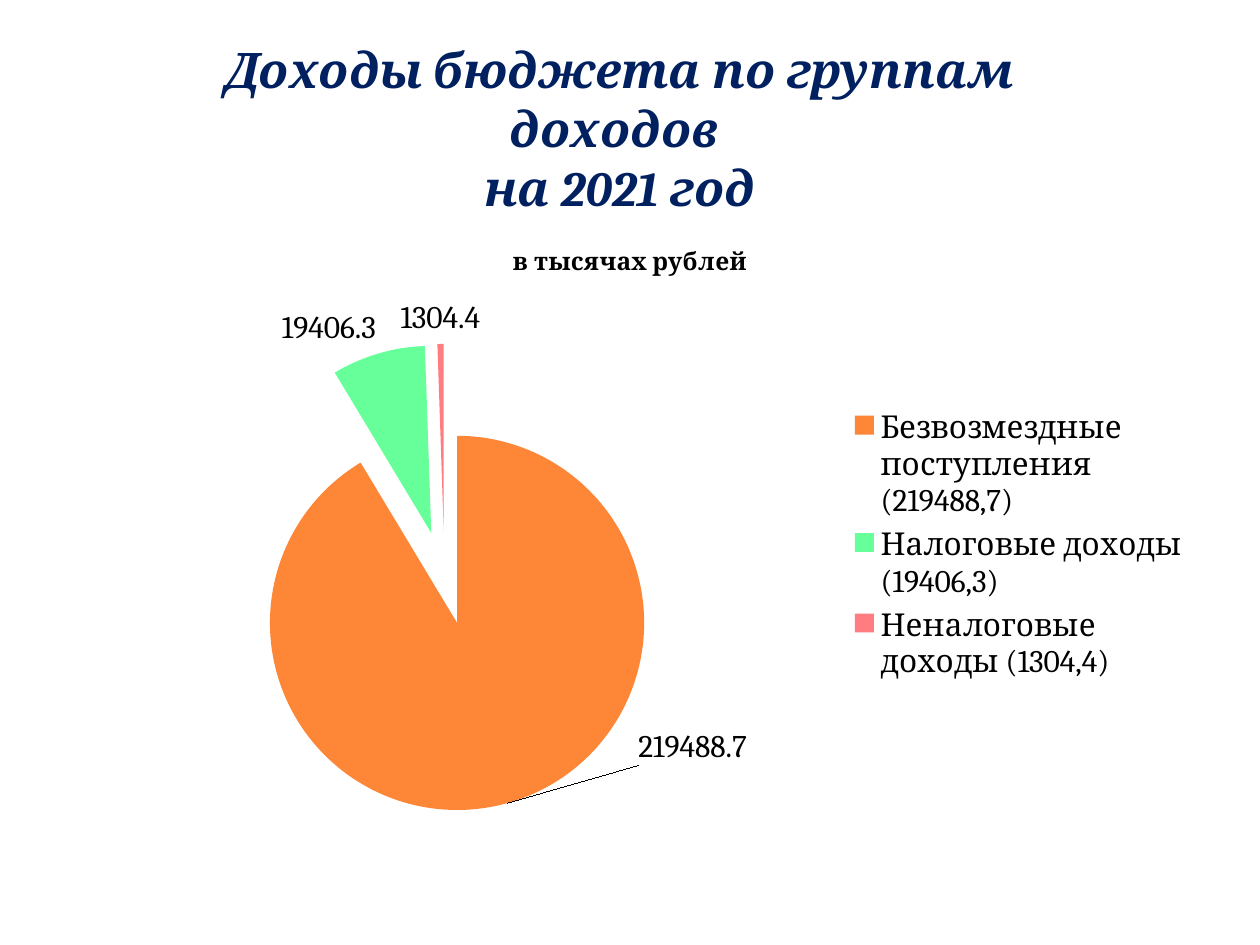
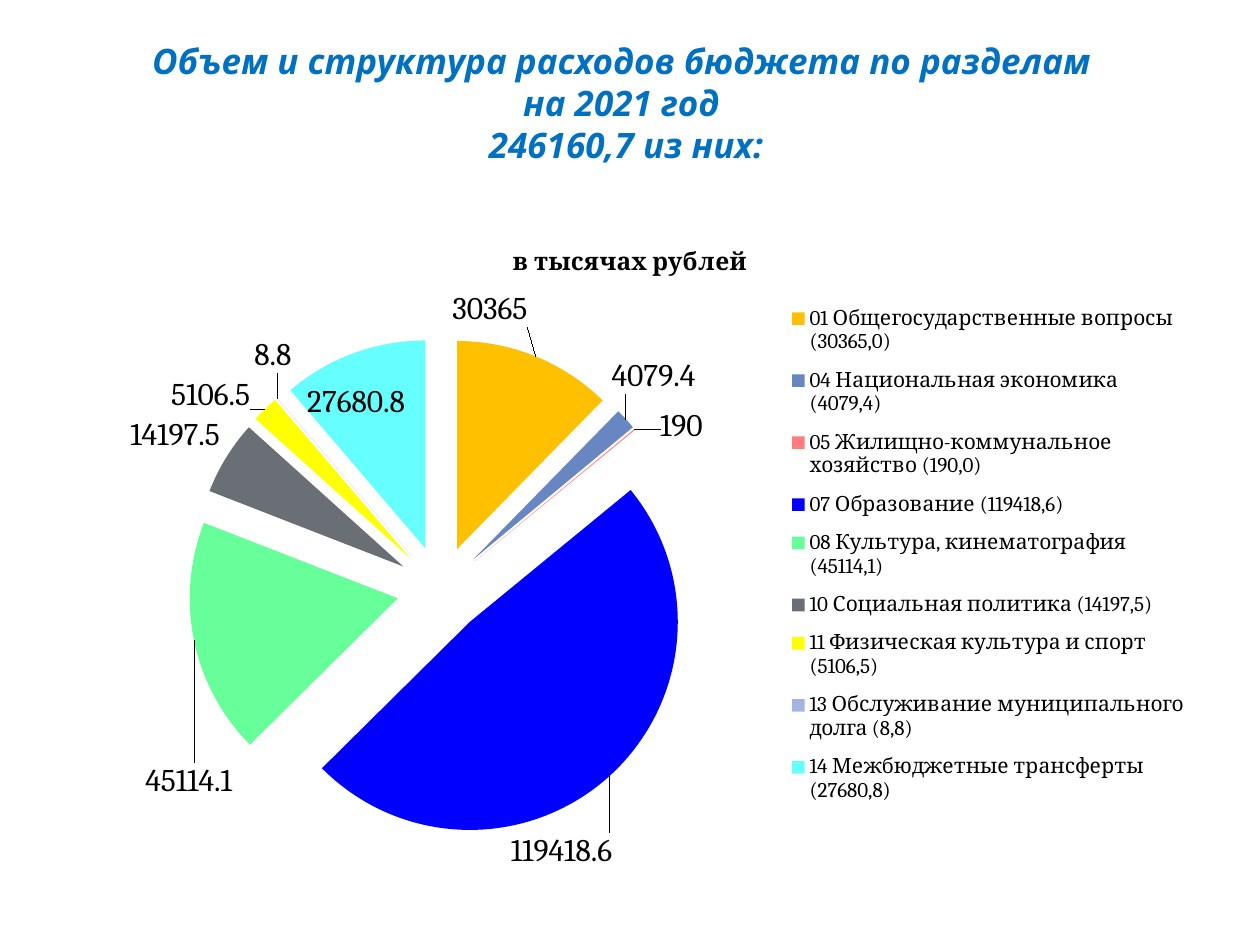
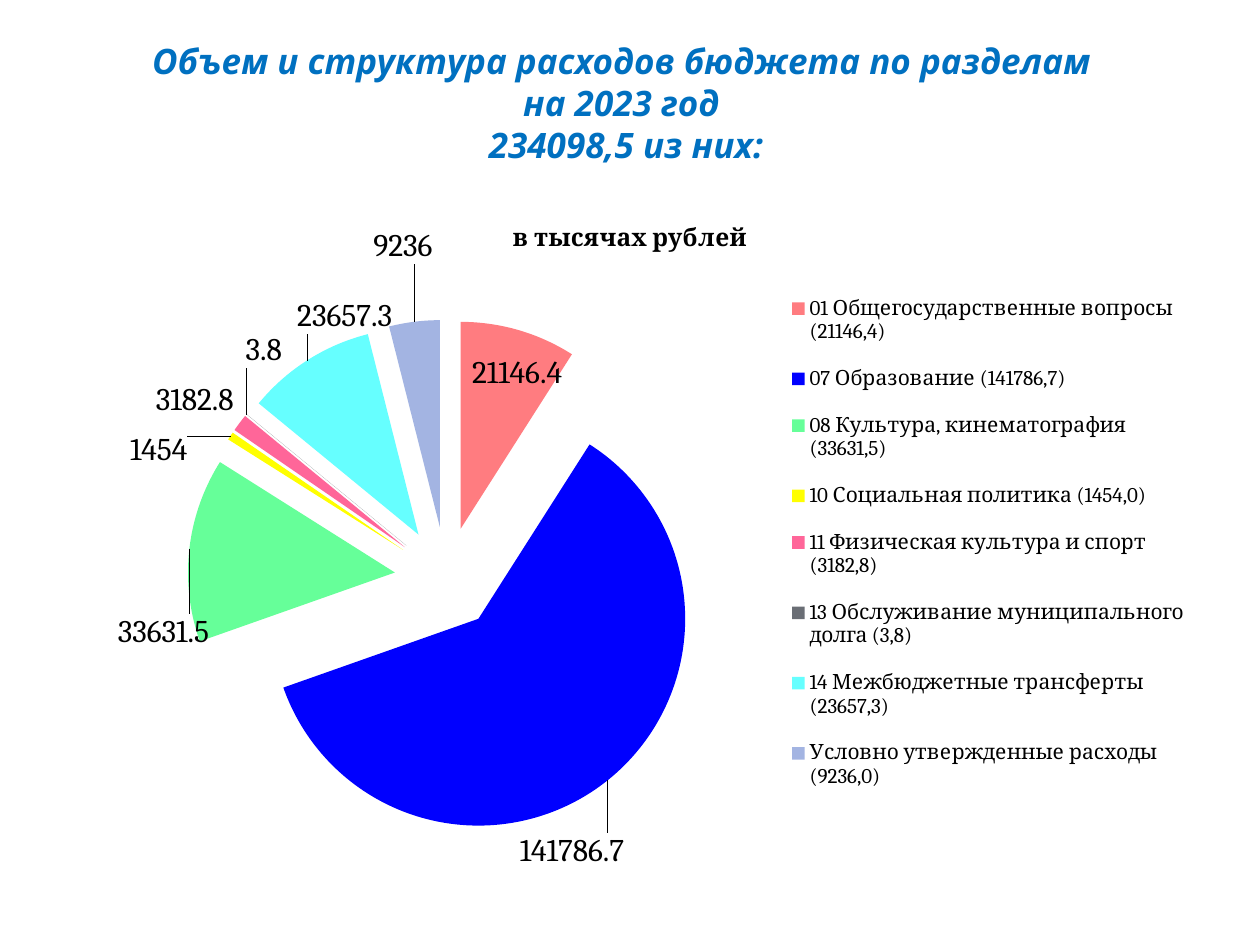
from pptx import Presentation
from pptx.chart.data import CategoryChartData
from pptx.dml.color import RGBColor
from pptx.enum.chart import XL_CHART_TYPE, XL_LABEL_POSITION, XL_LEGEND_POSITION
from pptx.enum.shapes import MSO_SHAPE
from pptx.enum.text import MSO_ANCHOR, PP_ALIGN
from pptx.oxml import parse_xml
from pptx.oxml.ns import nsdecls
from pptx.util import Cm, Pt

NAVY, SKY, BLACK = "002060", "0070C0", "000000"
ORANGE, MINT, CORAL, PINK = "FE8637", "66FF99", "FF7C80", "FF6699"
GOLD, STEEL, BLUE, GRAY = "FFC000", "6886C1", "0000FF", "6A6E75"
YELLOW, LILAC, CYAN = "FFFF00", "A3B4E2", "66FFFF"
SERIF, SANS = "Cambria", "Noto Sans"
UNIT = "в тысячах рублей"

GENERAL = "01 Общегосударственные вопросы"
SCHOOL = "07 Образование"
CULTURE = "08 Культура, кинематография"
SOCIAL = "10 Социальная политика"
SPORT = "11 Физическая культура и спорт"
DEBT = "13 Обслуживание муниципального долга"
GRANTS = "14 Межбюджетные трансферты"

# Each slice: name, value, colour and, if its label is moved, the shift in
# percent of the chart's width and height.
INCOME = [
    ("Безвозмездные поступления", 219488.7, ORANGE, (11.4, -12.6)),
    ("Налоговые доходы", 19406.3, MINT, None),
    ("Неналоговые доходы", 1304.4, CORAL, None),
]
COSTS_2021 = [
    (GENERAL, 30365, GOLD, (-7.6, -3.4)),
    ("04 Национальная экономика", 4079.4, STEEL, None),
    ("05 Жилищно-коммунальное хозяйство", 190, CORAL, None),
    (SCHOOL, 119418.6, BLUE, (-9.1, 7.8)),
    (CULTURE, 45114.1, MINT, (4, 18.6)),
    (SOCIAL, 14197.5, GRAY, None),
    (SPORT, 5106.5, YELLOW, None),
    (DEBT, 8.8, LILAC, None),
    (GRANTS, 27680.8, CYAN, None),
]
COSTS_2023 = [
    (GENERAL, 21146.4, CORAL, None),
    (SCHOOL, 141786.7, BLUE, (-8.1, 6.8)),
    (CULTURE, 33631.5, MINT, (2.4, 15.1)),
    (SOCIAL, 1454, YELLOW, None),
    (SPORT, 3182.8, PINK, None),
    (DEBT, 3.8, GRAY, None),
    (GRANTS, 23657.3, CYAN, (7.8, -2.9)),
    ("Условно утвержденные расходы", 9236, LILAC, (1.7, -7.4)),
]


def color(code):
    return RGBColor.from_string(code)


def layout(x, y, w=None, h=None):
    """Manual chart layout in percent; without a size it is a label shift."""
    parts = [("x", x), ("y", y)]
    modes = ""
    if w is not None:
        modes = '<c:xMode val="edge"/><c:yMode val="edge"/>'
        parts += [("w", w), ("h", h)]
    sizes = "".join(f'<c:{tag} val="{part / 100:.4g}"/>' for tag, part in parts)
    return parse_xml(f'<c:layout {nsdecls("c")}><c:manualLayout>{modes}{sizes}'
                     '</c:manualLayout></c:layout>')


def clear(node):
    for old in node.xpath("./c:layout"):
        node.remove(old)


class Deck:
    """Holds the presentation, the shared style and the current slide."""

    def __init__(self):
        self.prs = Presentation()
        self.prs.slide_width, self.prs.slide_height = Cm(25.4), Cm(19.05)
        self.slide = None

    def page(self):
        self.slide = self.prs.slides.add_slide(self.prs.slide_layouts[6])

    def style(self, font, face, size, tone, bold=False, italic=False):
        font.name, font.size = face, Pt(size)
        font.bold, font.italic = bold, italic
        font.color.rgb = color(tone)

    def label(self, shape, text, face, size, tone):
        frame = shape.text_frame
        frame.word_wrap = True
        frame.vertical_anchor = MSO_ANCHOR.MIDDLE
        frame.text = text
        for para in frame.paragraphs:
            para.alignment = PP_ALIGN.CENTER
            for run in para.runs:
                self.style(run.font, face, size, tone, True, True)

    def banner(self, text):
        shape = self.slide.shapes.add_shape(
            MSO_SHAPE.ROUNDED_RECTANGLE, Cm(1.98), Cm(0.79), Cm(21.03), Cm(3.58))
        shape.shadow.inherit = False
        shape.fill.background()
        shape.line.fill.background()
        self.label(shape, text, SERIF, 28, NAVY)

    def title(self, year, total):
        box = self.slide.shapes.add_textbox(Cm(1.19), Cm(0.58), Cm(22.86), Cm(2.97))
        text = ("Объем и структура расходов бюджета по разделам \v"
                f"на {year} год \v{total} из них:")
        self.label(box, text, SANS, 20, SKY)

    def pie(self, slices, top, burst, plot, key, size):
        """Exploded pie down to a fixed bottom; plot and key are in percent."""
        data = CategoryChartData()
        data.categories = [f"{name} ({value:.1f})".replace(".", ",")
                           for name, value, *_ in slices]
        data.add_series(UNIT, [value for _, value, *_ in slices])
        chart = self.slide.shapes.add_chart(
            XL_CHART_TYPE.PIE, Cm(1.27), Cm(top), Cm(22.86), Cm(17.53 - top), data).chart
        self.style(chart.font, SERIF, 18, BLACK)

        chart.has_title = True
        chart.chart_title.include_in_layout = False
        chart.chart_title.text_frame.text = UNIT
        run = chart.chart_title.text_frame.paragraphs[0].runs[0]
        self.style(run.font, SERIF, 14, BLACK, True)

        chart.has_legend = True
        legend = chart.legend
        legend.position = XL_LEGEND_POSITION.RIGHT
        legend.include_in_layout = False
        self.style(legend.font, SERIF, size, BLACK)
        node = legend._element
        clear(node)
        node.xpath("./c:legendPos")[0].addnext(layout(*key))

        area = chart._chartSpace.xpath("./c:chart/c:plotArea")[0]
        clear(area)
        area.insert(0, layout(*plot))
        self.cut(chart.plots[0], slices, burst)

    def cut(self, plot, slices, burst):
        """Colours, explodes and labels the slices."""
        plot.vary_by_categories = True
        series = plot.series[0]
        labels = series.data_labels
        labels.show_value = True
        labels.position = XL_LABEL_POSITION.BEST_FIT
        self.style(labels.font, SERIF, 18, BLACK)
        for i, (_, _, tone, shift) in enumerate(slices):
            point = series.points[i]
            point.format.fill.solid()
            point.format.fill.fore_color.rgb = color(tone)
            point.format.line.fill.background()
            if shift:
                point.data_label.position = XL_LABEL_POSITION.BEST_FIT
                mark = series._element.xpath(f"./c:dLbls/c:dLbl/c:idx[@val='{i}']")[0]
                mark.addnext(layout(*shift))
        series._element.xpath("./c:dPt")[0].addprevious(
            parse_xml(f'<c:explosion {nsdecls("c")} val="{burst}"/>'))


def main():
    deck = Deck()
    deck.page()
    deck.banner("Доходы бюджета по группам доходов \nна 2021 год")
    deck.pie(INCOME, 4.45, 25, (13, 19, 41.3, 72.1), (69, 28, 30.5, 44), 18)
    deck.page()
    deck.title(2021, "246160,7")
    deck.pie(COSTS_2021, 4.45, 21, (11.1, 18, 44.4, 77.7), (64.6, 11, 35, 81), 12)
    deck.page()
    deck.title(2023, "234098,5")
    deck.pie(COSTS_2023, 3.96, 25, (11, 18.3, 45.6, 76.9), (64.6, 11.5, 35, 80), 12)
    deck.prs.save("out.pptx")


if __name__ == "__main__":
    main()
